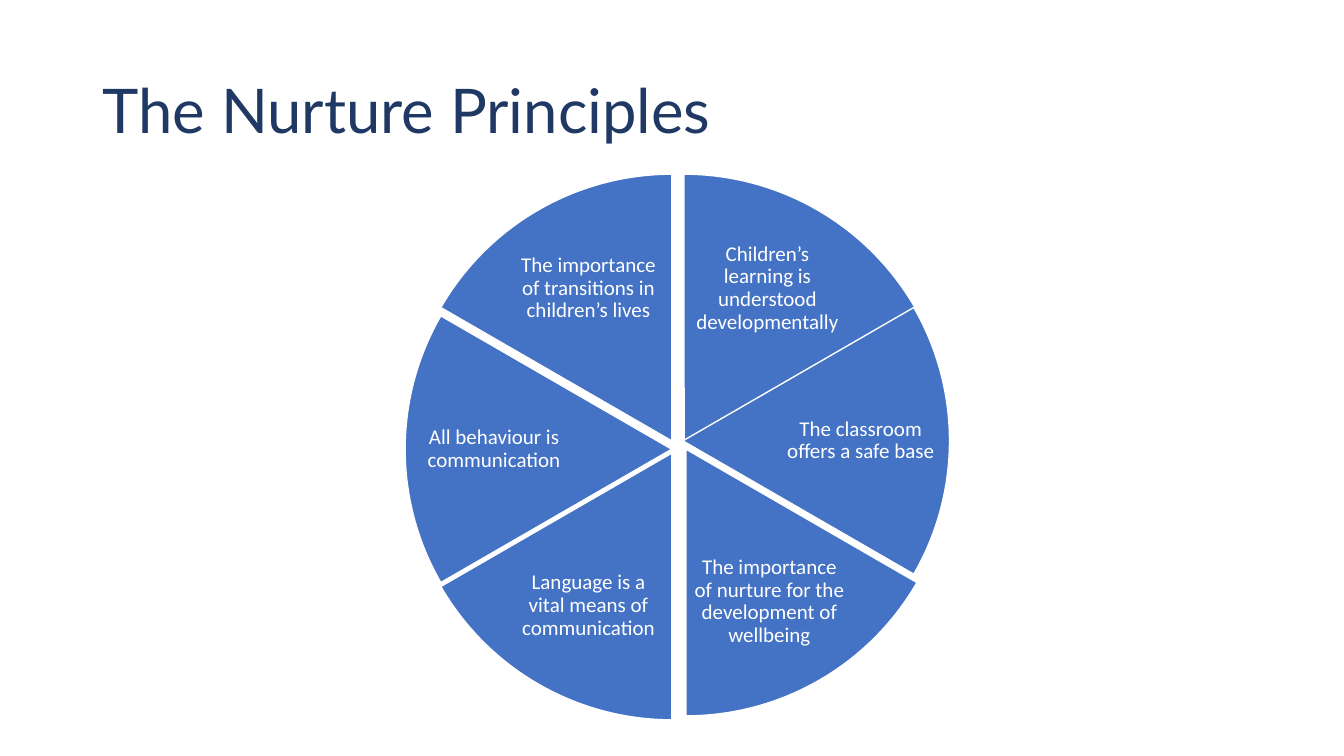
from pptx import Presentation
from pptx.dml.color import RGBColor
from pptx.enum.shapes import MSO_SHAPE
from pptx.enum.text import MSO_ANCHOR, PP_ALIGN
from pptx.util import Cm, Pt

PIE = MSO_SHAPE.PIE
MIDDLE = MSO_ANCHOR.MIDDLE
LEFT, CENTER = PP_ALIGN.LEFT, PP_ALIGN.CENTER
TITLE_ONLY = 5

COLORS = {"title": "203864", "slice": "4472C4", "white": "FFFFFF"}

DIAMETER = 13.44
START_ANGLE, ANGLE_STEP, FULL_TURN = 162, 36, 216  # 0.6 is one degree

SIDE_LABEL = {"shift": (4.48, 0), "size": (4.06, 2.72)}
CORNER_LABEL = {"shift": (2.1, 3.84), "size": (3.91, 2.87)}

# Clockwise from the top: text, left and top of the slice's circle (cm),
# label format, and the direction of the label from the circle's centre.
PRINCIPLES = [
    ("Children’s learning is understood developmentally",
     10.52, 4.39, CORNER_LABEL, (1, -1)),
    ("The classroom offers a safe base",
     10.49, 4.39, SIDE_LABEL, (1, 0)),
    ("The importance of nurture for the development of wellbeing",
     10.57, 4.6, CORNER_LABEL, (1, 1)),
    ("Language is a vital means of communication",
     10.21, 4.7, CORNER_LABEL, (-1, 1)),
    ("All behaviour is communication",
     10.21, 4.6, SIDE_LABEL, (-1, 0)),
    ("The importance of transitions in children’s lives",
     10.21, 4.39, CORNER_LABEL, (-1, -1)),
]


def set_attributes(target, values):
    for name, value in values.items():
        setattr(target, name, value)


def write_text(frame, text, font, size, color, align):
    frame.word_wrap = True
    frame.vertical_anchor = MIDDLE
    para = frame.paragraphs[0]
    set_attributes(para, {"alignment": align, "line_spacing": 0.9})
    span = para.add_run()
    span.text = text
    set_attributes(span.font, {"name": font, "size": Pt(size)})
    span.font.color.rgb = RGBColor.from_string(COLORS[color])
    return para


def add_title(page, text):
    title = page.shapes.title
    set_attributes(title, {"left": Cm(2.33), "top": Cm(1.01),
                           "width": Cm(29.21), "height": Cm(3.68)})
    write_text(title.text_frame, text, "Lato", 44, "title", LEFT)


def add_slice(group, left, top, start):
    piece = group.shapes.add_shape(
        PIE, Cm(left), Cm(top), Cm(DIAMETER), Cm(DIAMETER))
    piece.adjustments[0] = start % FULL_TURN
    piece.adjustments[1] = (start + ANGLE_STEP) % FULL_TURN
    piece.shadow.inherit = False
    piece.fill.solid()
    piece.fill.fore_color.rgb = RGBColor.from_string(COLORS["slice"])
    piece.line.color.rgb = RGBColor.from_string(COLORS["white"])
    piece.line.width = Pt(1)


def add_label(group, text, center_x, center_y, width, height):
    box = group.shapes.add_textbox(
        Cm(center_x - width / 2), Cm(center_y - height / 2),
        Cm(width), Cm(height))
    frame = box.text_frame
    margins = ("margin_left", "margin_top", "margin_right", "margin_bottom")
    set_attributes(frame, dict.fromkeys(margins, Cm(0.05)))
    para = write_text(frame, text, "Calibri", 15, "white", CENTER)
    para.space_after = Pt(5.25)


def add_wheel(page):
    group = page.shapes.add_group_shape()
    for index, (text, left, top, label, direction) in enumerate(PRINCIPLES):
        add_slice(group, left, top, START_ANGLE + index * ANGLE_STEP)
        center_x, center_y = (
            corner + DIAMETER / 2 + sign * shift
            for corner, sign, shift
            in zip((left, top), direction, label["shift"]))
        add_label(group, text, center_x, center_y, *label["size"])


def main():
    deck = Presentation()
    deck.slide_width, deck.slide_height = Cm(33.87), Cm(19.05)
    page = deck.slides.add_slide(deck.slide_layouts[TITLE_ONLY])
    add_title(page, "The Nurture Principles")
    add_wheel(page)
    deck.save("out.pptx")


if __name__ == "__main__":
    main()
